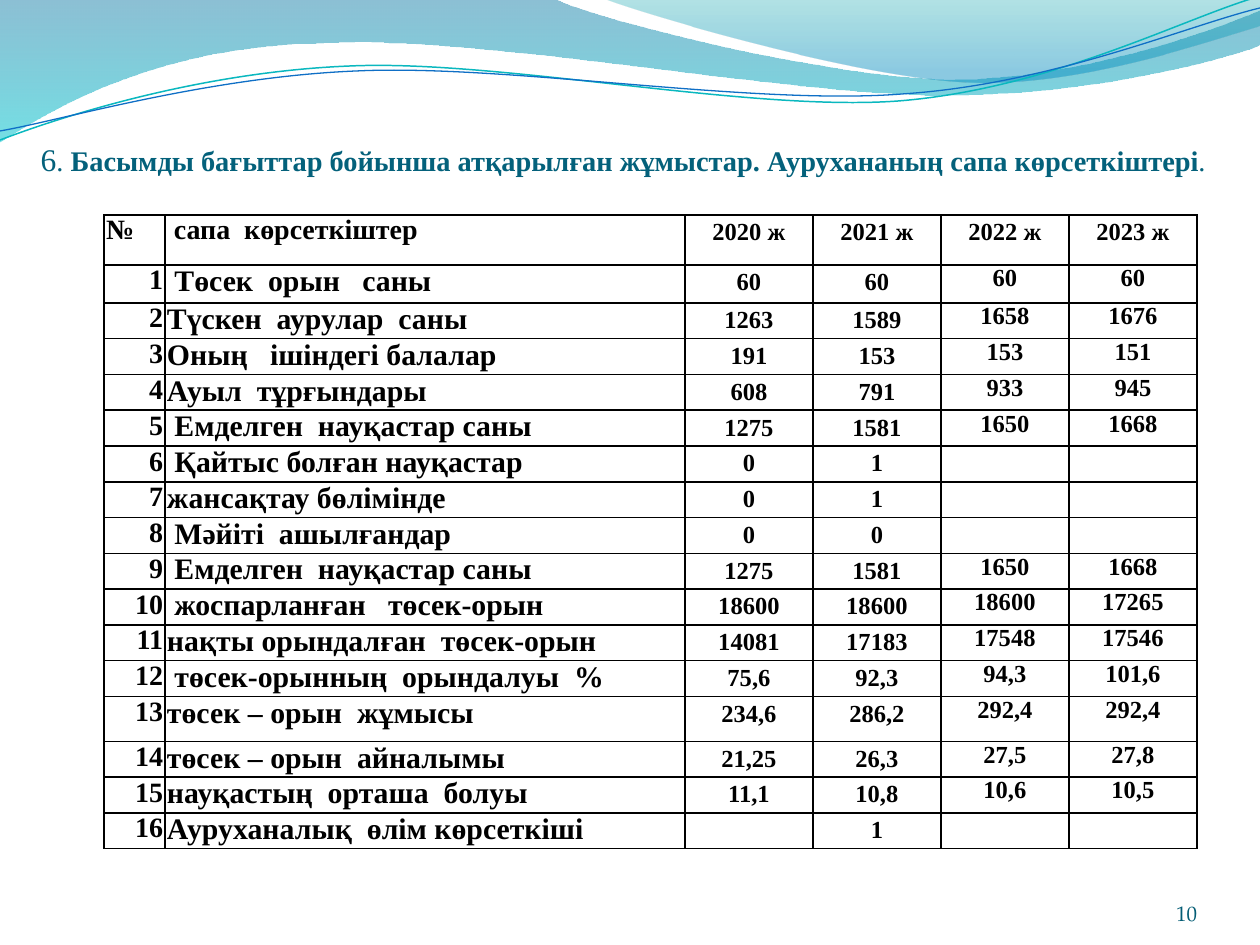
"""Build the hospital quality indicators slide."""
from dataclasses import dataclass

from lxml.etree import SubElement
from pptx import Presentation
from pptx.dml.color import RGBColor
from pptx.enum.text import MSO_ANCHOR, PP_ALIGN
from pptx.oxml.ns import qn
from pptx.util import Pt

SCALE = 914400 / 126


def px(n):
    return round(n * SCALE)


@dataclass(frozen=True)
class Theme:
    serif: str = "Times New Roman"
    number_font: str = "TeX Gyre Pagella"
    title: str = "04617B"
    number: str = "045D75"
    ink: str = "000000"
    back_wave: tuple = ((0, "0074A1", 45), (1, "00C6CF", 55))
    front_wave: tuple = ((0, "00A1A9", 30), (0.8, "008BBF", 45))
    teal: str = "0AB8BF"
    blue: str = "0F6FC6"
    indent_size: float = 45
    lead_size: float = 18
    title_size: float = 16.2
    number_size: float = 12
    head_size: float = 16
    label_size: float = 17
    value_size: float = 14
    border: float = 1


class Deck:
    """Hold the theme and the current slide."""

    def __init__(self, theme, width, height):
        self.theme = theme
        self.prs = Presentation()
        self.prs.slide_width, self.prs.slide_height = px(width), px(height)
        self.s = self.prs.slides.add_slide(self.prs.slide_layouts[6])

    def outline(self, start, segments, close):
        points = [pair for seg in segments for pair in zip(seg[::2], seg[1::2])]
        builder = self.s.shapes.build_freeform(*start, scale=SCALE)
        builder.add_line_segments(points, close=close)
        sp = builder.convert_to_shape()
        sp.shadow.inherit = False
        lines = iter(list(sp._element.iter(qn("a:lnTo"))))
        for seg in segments:
            group = [next(lines) for _ in seg[::2]]
            if len(group) == 3:
                curve = SubElement(group[0].getparent(), qn("a:cubicBezTo"))
                group[0].addprevious(curve)
                for line in group:
                    curve.append(line[0])
                    line.getparent().remove(line)
        return sp

    def wave(self, start, segments, stops):
        sp = self.outline(start, segments, True)
        sp.line.fill.background()
        sp.fill.gradient()
        sp.fill.gradient_angle = 270
        for stop, (position, color, _) in zip(sp.fill.gradient_stops, stops):
            stop.position = position
            stop.color.rgb = RGBColor.from_string(color)
        colors = sp._element.spPr.iter(qn("a:srgbClr"))
        for clr, (_, _, opacity) in zip(colors, stops):
            SubElement(clr, qn("a:alpha"), val=str(opacity * 1000))

    def curve(self, start, segments, color, width):
        sp = self.outline(start, segments, False)
        sp.fill.background()
        sp.line.color.rgb = RGBColor.from_string(color)
        sp.line.width = Pt(width)

    def run(self, p, text, size, color, font, bold=False):
        r = p.add_run()
        r.text = text
        r.font.name, r.font.size, r.font.bold = font, Pt(size), bold
        r.font.color.rgb = RGBColor.from_string(color)

    def text(self, box, runs, color, font, align=PP_ALIGN.LEFT, top=0):
        tf = self.s.shapes.add_textbox(*map(px, box)).text_frame
        tf.word_wrap = True
        tf.vertical_anchor = MSO_ANCHOR.BOTTOM
        tf.margin_left = tf.margin_right = tf.margin_bottom = 0
        tf.margin_top = px(top)
        p = tf.paragraphs[0]
        p.alignment = align
        for text, size, bold in runs:
            self.run(p, text, size, color, font, bold)

    def cell(self, cell, text, size, align, spacing):
        cell.margin_left = cell.margin_right = px(2)
        cell.margin_top = cell.margin_bottom = 0
        p = cell.text_frame.paragraphs[0]
        p.alignment = align
        if spacing:
            p.line_spacing = spacing
        if text:
            self.run(p, text, size, self.theme.ink, self.theme.serif, True)
        else:
            SubElement(p._p, qn("a:endParaRPr"), sz=str(size * 100))
        tc_pr = cell._tc.get_or_add_tcPr()
        for side in ("a:lnL", "a:lnR", "a:lnT", "a:lnB"):
            ln = SubElement(tc_pr, qn(side), w=str(Pt(self.theme.border)))
            fill = SubElement(ln, qn("a:solidFill"))
            SubElement(fill, qn("a:srgbClr"), val=self.theme.ink)
        cell.fill.background()

    def table(self, left, top, widths, heights, rows):
        t = self.theme
        frame = self.s.shapes.add_table(len(heights), len(widths), px(left), px(top),
                                        px(sum(widths)), px(sum(heights)))
        table = frame.table
        table.first_row = table.horz_banding = False
        for column, width in zip(table.columns, widths):
            column.width = px(width)
        for row, height in zip(table.rows, heights):
            row.height = px(height)
        for i, values in enumerate(rows):
            for j, value in enumerate(values):
                size, align, spacing = t.value_size, PP_ALIGN.CENTER, None
                if j == 0:
                    size = t.head_size
                    align = PP_ALIGN.RIGHT if i else PP_ALIGN.LEFT
                elif j == 1:
                    size = t.label_size if i else t.head_size
                    align = PP_ALIGN.LEFT
                elif i == 0 or j < 4:
                    spacing = 1.15
                self.cell(table.cell(i, j), value, size, align, spacing)


HEADER = ("№", " сапа  көрсеткіштер", "2020 ж", "2021 ж", "2022 ж", "2023 ж")
INDICATORS = [
    (" Төсек  орын   саны", "60", "60", "60", "60"),
    ("Түскен  аурулар  саны", "1263", "1589", "1658", "1676"),
    ("Оның   ішіндегі балалар", "191", "153", "153", "151"),
    ("Ауыл  тұрғындары", "608", "791", "933", "945"),
    (" Емделген  науқастар саны", "1275", "1581", "1650", "1668"),
    (" Қайтыс болған науқастар", "0", "1", "", ""),
    ("жансақтау бөлімінде", "0", "1", "", ""),
    (" Мәйіті  ашылғандар", "0", "0", "", ""),
    (" Емделген  науқастар саны", "1275", "1581", "1650", "1668"),
    (" жоспарланған   төсек-орын", "18600", "18600", "18600", "17265"),
    ("нақты орындалған  төсек-орын", "14081", "17183", "17548", "17546"),
    (" төсек-орынның  орындалуы  %", "75,6", "92,3", "94,3", "101,6"),
    ("төсек – орын  жұмысы", "234,6", "286,2", "292,4", "292,4"),
    ("төсек – орын  айналымы", "21,25", "26,3", "27,5", "27,8"),
    ("науқастың  орташа  болуы", "11,1", "10,8", "10,6", "10,5"),
    ("Ауруханалық  өлім көрсеткіші", "", "1", "", ""),
]


def main():
    t = Theme()
    deck = Deck(t, 1260, 945)
    deck.wave((0, 0), [(554, -1), (600, 21, 837, 79, 955, 79),
                       (1075, 79, 1207, 33, 1260, 11), (1261, 45),
                       (1239, 55, 1096, 96, 940, 95), (784, 95, 481, 35, 324, 43),
                       (163, 45, 58, 105, -1, 142)], t.back_wave)
    deck.wave((604, -1), [(641, 14, 859, 78, 969, 82),
                          (1079, 87, 1211, 40, 1260, 26), (1260, 0)], t.front_wave)
    deck.curve((0, 140), [(60, 117, 199, 72, 349, 66), (498, 59, 747, 112, 898, 101),
                          (1050, 89, 1182, 19, 1257, -3)], t.teal, 0.85)
    deck.curve((0, 131), [(59, 121, 207, 77, 357, 71), (508, 64, 752, 106, 903, 94),
                          (1053, 84, 1186, 26, 1260, 8)], t.blue, 0.75)
    title = "Басымды бағыттар бойынша атқарылған жұмыстар. Аурухананың сапа көрсеткіштері"
    deck.text((21, 99, 1207, 88),
              [(" ", t.indent_size, False), ("6", t.lead_size, False),
               (". ", t.title_size, False), (title, t.title_size, True),
               (".", t.title_size, False)], t.title, t.serif, top=6)
    deck.text((1092, 876, 105, 50), [("10", t.number_size, False)],
              t.number, t.number_font, PP_ALIGN.RIGHT)
    heights = [50, 38] + [35] * 11 + [45] + [35] * 3
    rows = [HEADER] + [(str(n), *row) for n, row in enumerate(INDICATORS, 1)]
    deck.table(104, 215, [61, 520] + [128] * 4, heights, rows)
    deck.prs.save("out.pptx")


if __name__ == "__main__":
    main()
